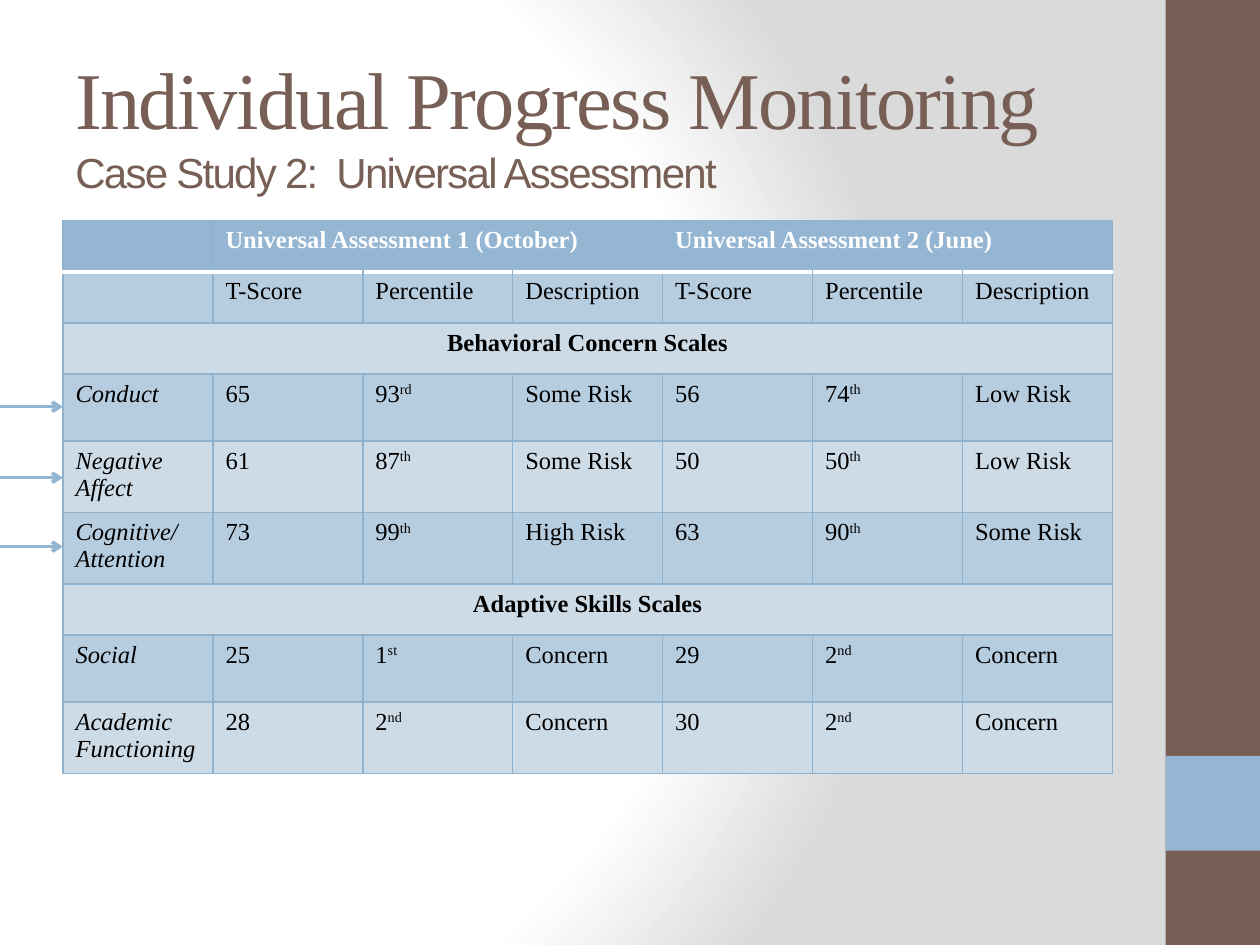
"""Build the progress monitoring slide with its assessment score table."""
from dataclasses import dataclass

from lxml import etree
from pptx import Presentation
from pptx.dml.color import RGBColor
from pptx.enum.shapes import MSO_CONNECTOR, MSO_SHAPE
from pptx.enum.text import MSO_ANCHOR, PP_ALIGN
from pptx.oxml import parse_xml
from pptx.oxml.ns import nsdecls, qn
from pptx.util import Cm, Pt

RECT = MSO_SHAPE.RECTANGLE
STRAIGHT = MSO_CONNECTOR.STRAIGHT
MIDDLE = MSO_ANCHOR.MIDDLE
CENTER = PP_ALIGN.CENTER


@dataclass(frozen=True)
class Theme:
    brown: str = "775F55"
    blue: str = "94B6D2"
    band: str = "B6CCDF"
    pale: str = "CDDBE7"
    rule: str = "8FB2CF"
    white: str = "FFFFFF"
    grey: str = "DADADA"
    black: str = "000000"
    serif: str = "Times New Roman"
    sans: str = "Arial"
    title: int = 46
    subtitle: int = 24
    body: int = 14


T = Theme()


def write(p, text, size=T.body, color=T.black, font=T.serif, bold=False,
          italic=False, spacing=0, baseline=0):
    r = p.add_run()
    r.text = text
    r.font.size = Pt(size)
    r.font.name = font
    r.font.bold = bold
    r.font.italic = italic
    r.font.color.rgb = RGBColor.from_string(color)
    rPr = r._r.get_or_add_rPr()
    if spacing:
        rPr.set("spc", str(spacing))
    if baseline:
        rPr.set("baseline", str(baseline))


def set_border(cell, side, color, width):
    tcPr = cell._tc.get_or_add_tcPr()
    ln = etree.SubElement(tcPr, qn(f"a:ln{side}"), w=str(Pt(width)))
    fill = etree.SubElement(ln, qn("a:solidFill"))
    etree.SubElement(fill, qn("a:srgbClr"), val=color)


prs = Presentation()
prs.slide_width, prs.slide_height = Cm(25.4), Cm(19.05)
s = prs.slides.add_slide(prs.slide_layouts[6])

stops = "".join(
    f'<a:gs pos="{pos}"><a:srgbClr val="{color}"/></a:gs>'
    for pos, color in ((0, T.white), (75000, T.white), (100000, T.grey)))
s._element.cSld.insert(0, parse_xml(
    f'<p:bg {nsdecls("p", "a")}><p:bgPr><a:gradFill rotWithShape="1">'
    f'<a:gsLst>{stops}</a:gsLst><a:path path="circle">'
    '<a:fillToRect l="20000" t="50000" r="100000" b="50000"/></a:path>'
    '</a:gradFill><a:effectLst/></p:bgPr></p:bg>'))

for top, height, color in ((0, 19.05, T.brown), (15.24, 1.91, T.blue)):
    sp = s.shapes.add_shape(RECT, Cm(23.5), Cm(top), Cm(1.9), Cm(height))
    sp.shadow.inherit = False
    sp.fill.solid()
    sp.fill.fore_color.rgb = RGBColor.from_string(color)
    sp.line.fill.background()

tf = s.shapes.add_textbox(Cm(1.27), Cm(0.76), Cm(21.16), Cm(3.18)).text_frame
tf.word_wrap = True
tf.vertical_anchor = MIDDLE
tf.margin_top = Cm(0.38)
p = tf.paragraphs[0]
write(p, "Individual Progress Monitoring", size=T.title, color=T.brown, spacing=-100)
p.add_line_break()
write(p, "Case Study 2:  Universal Assessment", size=T.subtitle, color=T.brown,
      font=T.sans, spacing=-100)

measures = ["T-Score", "Percentile", "Description"]
rows = [
    ["", "Universal Assessment 1 (October)", "", "",
     "Universal Assessment 2 (June)", "", ""],
    ["", *measures, *measures],
    ["Behavioral Concern Scales"],
    ["Conduct", "65", "93rd", "Some Risk", "56", "74th", "Low Risk"],
    ["Negative Affect", "61", "87th", "Some Risk", "50", "50th", "Low Risk"],
    ["Cognitive/Attention", "73", "99th", "High Risk", "63", "90th", "Some Risk"],
    ["Adaptive Skills Scales"],
    ["Social", "25", "1st", "Concern", "29", "2nd", "Concern"],
    ["Academic Functioning", "28", "2nd", "Concern", "30", "2nd", "Concern"],
]
section_rows = [i for i, row in enumerate(rows) if len(row) == 1]
heights = [1.03 if i < 2 or i in section_rows else 1.35 for i in range(len(rows))]

table = s.shapes.add_table(len(rows), 7, Cm(1.27), Cm(4.45), Cm(21.16),
                           Cm(sum(heights))).table
for col in table.columns:
    col.width = Cm(21.16 / 7)
for row, height in zip(table.rows, heights):
    row.height = Cm(height)
for first in (1, 4):
    table.cell(0, first).merge(table.cell(0, first + 2))
for i in section_rows:
    table.cell(i, 0).merge(table.cell(i, 6))

for i in range(len(rows)):
    fill = T.blue if i == 0 else T.band if i % 2 else T.pale
    for j in range(7):
        cell = table.cell(i, j)
        for side in "LRTB":
            under_header = (i, side) in ((0, "B"), (1, "T"))
            set_border(cell, side, *((T.white, 3) if under_header else (T.rule, 1)))
        cell.fill.solid()
        cell.fill.fore_color.rgb = RGBColor.from_string(fill)
    for j, text in enumerate(rows[i]):
        if not text:
            continue
        p = table.cell(i, j).text_frame.paragraphs[0]
        if i == 0:
            write(p, text, color=T.white, bold=True)
        elif i in section_rows:
            p.alignment = CENTER
            write(p, text, bold=True)
        elif i > 1 and j in (2, 5):
            write(p, text[:-2])
            write(p, text[-2:], baseline=30000)
        else:
            write(p, text, italic=j == 0)

for y in (8.2, 9.63, 11.02):
    arrow = s.shapes.add_connector(STRAIGHT, Cm(0), Cm(y), Cm(1.27), Cm(y))
    arrow.line.color.rgb = RGBColor.from_string(T.blue)
    arrow.line.width = Pt(2)
    etree.SubElement(arrow.line._get_or_add_ln(), qn("a:tailEnd"), type="arrow")
    etree.SubElement(arrow._element.spPr, qn("a:effectLst"))

prs.save("out.pptx")
